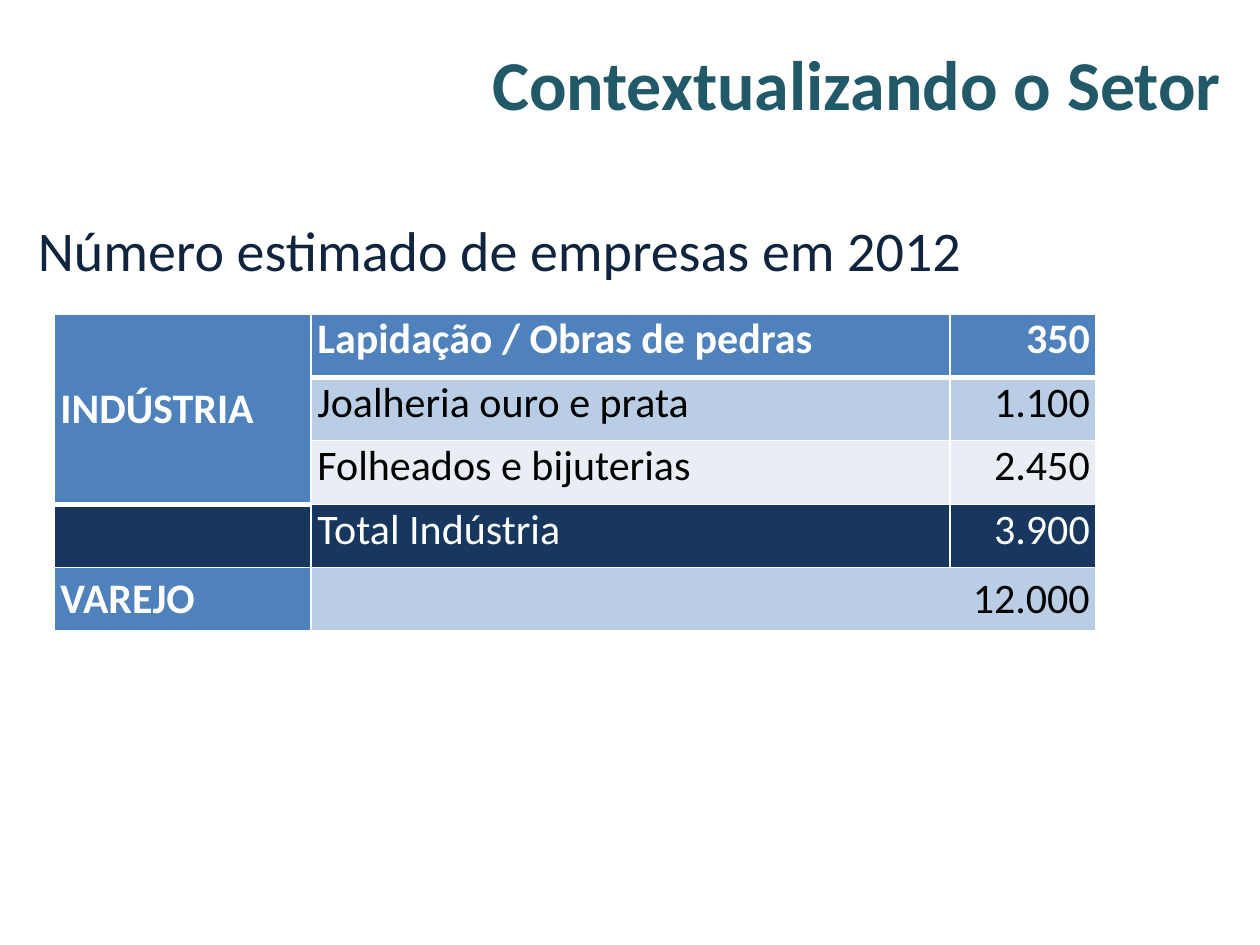
from lxml import etree
from pptx import Presentation
from pptx.dml.color import RGBColor
from pptx.enum.text import MSO_ANCHOR, MSO_AUTO_SIZE, PP_ALIGN
from pptx.oxml.ns import qn
from pptx.util import Inches, Pt

LEFT, RIGHT, JUSTIFY = PP_ALIGN.LEFT, PP_ALIGN.RIGHT, PP_ALIGN.JUSTIFY
TOP, MIDDLE = MSO_ANCHOR.TOP, MSO_ANCHOR.MIDDLE
NO_AUTOFIT = MSO_AUTO_SIZE.NONE

COLORS = {
    "title": "215968",
    "subtitle": "0F243E",
    "accent": "4F81BD",
    "band": "B9CDE5",
    "light": "E9EDF4",
    "total": "17375E",
    "white": "FFFFFF",
    "black": "000000",
}

COLUMN_WIDTHS = [2.04, 5.07, 1.16]
ROW_HEIGHT = 0.504
ROWS = [
    ("INDÚSTRIA", "Lapidação / Obras de pedras", "350"),
    ("", "Joalheria ouro e prata", "1.100"),
    ("", "Folheados e bijuterias", "2.450"),
    ("", "Total Indústria", "3.900"),
    ("VAREJO", "", "12.000"),
]
# Per row: fill of the group column, fill of the data columns, data text colour
ROW_COLORS = [
    ("accent", "accent", "white"),
    ("accent", "band", "black"),
    ("accent", "light", "black"),
    ("total", "total", "white"),
    ("accent", "band", "black"),
]
INDUSTRY_ROWS = 3
RETAIL_ROW = 4
# Cells with a thick rule underneath: the header row and the industry group
THICK_BELOW = {(0, 0), (0, 1), (0, 2), (INDUSTRY_ROWS - 1, 0)}


class SlideBuilder:
    def __init__(self, slide, font_name="Calibri"):
        self.slide = slide
        self.font_name = font_name

    def style(self, paragraph, size, color, align, bold=False):
        paragraph.alignment = align
        font = paragraph.font
        font.name, font.size, font.bold = self.font_name, Pt(size), bold
        font.color.rgb = RGBColor.from_string(COLORS[color])

    def place(self, placeholder, box, text):
        """Position a placeholder, fill it and return its paragraph."""
        placeholder.left, placeholder.top, placeholder.width, placeholder.height = map(Inches, box)
        frame = placeholder.text_frame
        frame.text = text
        frame.word_wrap = True
        frame.auto_size = NO_AUTOFIT
        return frame.paragraphs[0]

    def title(self, text, box):
        paragraph = self.place(self.slide.shapes.title, box, text)
        self.style(paragraph, 40, "title", RIGHT, bold=True)

    def body(self, text, box):
        paragraph = self.place(self.slide.placeholders[1], box, text)
        properties = paragraph._p.get_or_add_pPr()
        properties.set("marL", "0")
        properties.set("indent", "0")
        etree.SubElement(properties, qn("a:buNone"))
        paragraph.line_spacing = 1.5
        paragraph.space_before, paragraph.space_after = Pt(0), Pt(12)
        self.style(paragraph, 32, "subtitle", JUSTIFY)

    def borders(self, cell, row, column):
        bottom = 3 if (row, column) in THICK_BELOW else 1
        top = 3 if (row - 1, column) in THICK_BELOW else 1
        properties = cell._tc.get_or_add_tcPr()
        sides = (("lnL", 1), ("lnR", 1), ("lnT", top), ("lnB", bottom))
        for position, (side, width) in enumerate(sides):
            line = etree.Element(qn(f"a:{side}"), w=str(Pt(width)))
            fill = etree.SubElement(line, qn("a:solidFill"))
            etree.SubElement(fill, qn("a:srgbClr"), val=COLORS["white"])
            properties.insert(position, line)

    def cell(self, cell, text, fill, color, align, anchor, bold):
        cell.text = text
        cell.margin_left = cell.margin_right = Inches(0.05)
        cell.margin_top = cell.margin_bottom = 0
        cell.vertical_anchor = anchor
        cell.fill.solid()
        cell.fill.fore_color.rgb = RGBColor.from_string(COLORS[fill])
        self.style(cell.text_frame.paragraphs[0], 24, color, align, bold)

    def company_table(self, left, top):
        table = self.slide.shapes.add_table(
            len(ROWS), len(COLUMN_WIDTHS), Inches(left), Inches(top),
            Inches(sum(COLUMN_WIDTHS)), Inches(ROW_HEIGHT * len(ROWS)),
        ).table
        for column, width in zip(table.columns, COLUMN_WIDTHS):
            column.width = Inches(width)

        for r, (texts, colors) in enumerate(zip(ROWS, ROW_COLORS)):
            group_fill, data_fill, data_color = colors
            if r == RETAIL_ROW:
                texts = (texts[0], texts[2], "")
            for c, text in enumerate(texts):
                is_group = c == 0
                is_value = c == 2 or (r == RETAIL_ROW and c == 1)
                cell = table.cell(r, c)
                self.cell(
                    cell, text,
                    fill=group_fill if is_group else data_fill,
                    color="white" if is_group else data_color,
                    align=RIGHT if is_value else LEFT,
                    anchor=MIDDLE if is_group or r == RETAIL_ROW else TOP,
                    bold=is_group or r == 0,
                )
                self.borders(cell, r, c)

        table.cell(0, 0).merge(table.cell(INDUSTRY_ROWS - 1, 0))
        table.cell(RETAIL_ROW, 1).merge(table.cell(RETAIL_ROW, 2))


def main():
    presentation = Presentation()
    presentation.slide_width, presentation.slide_height = Inches(10), Inches(7.5)
    slide = presentation.slides.add_slide(presentation.slide_layouts[1])
    builder = SlideBuilder(slide)
    builder.title("Contextualizando o Setor", (0.18, 0.03, 9.61, 1.25))
    builder.body("Número estimado de empresas em 2012", (0.2, 1.39, 8.66, 0.94))
    builder.company_table(0.43, 2.49)
    presentation.save("out.pptx")


if __name__ == "__main__":
    main()
